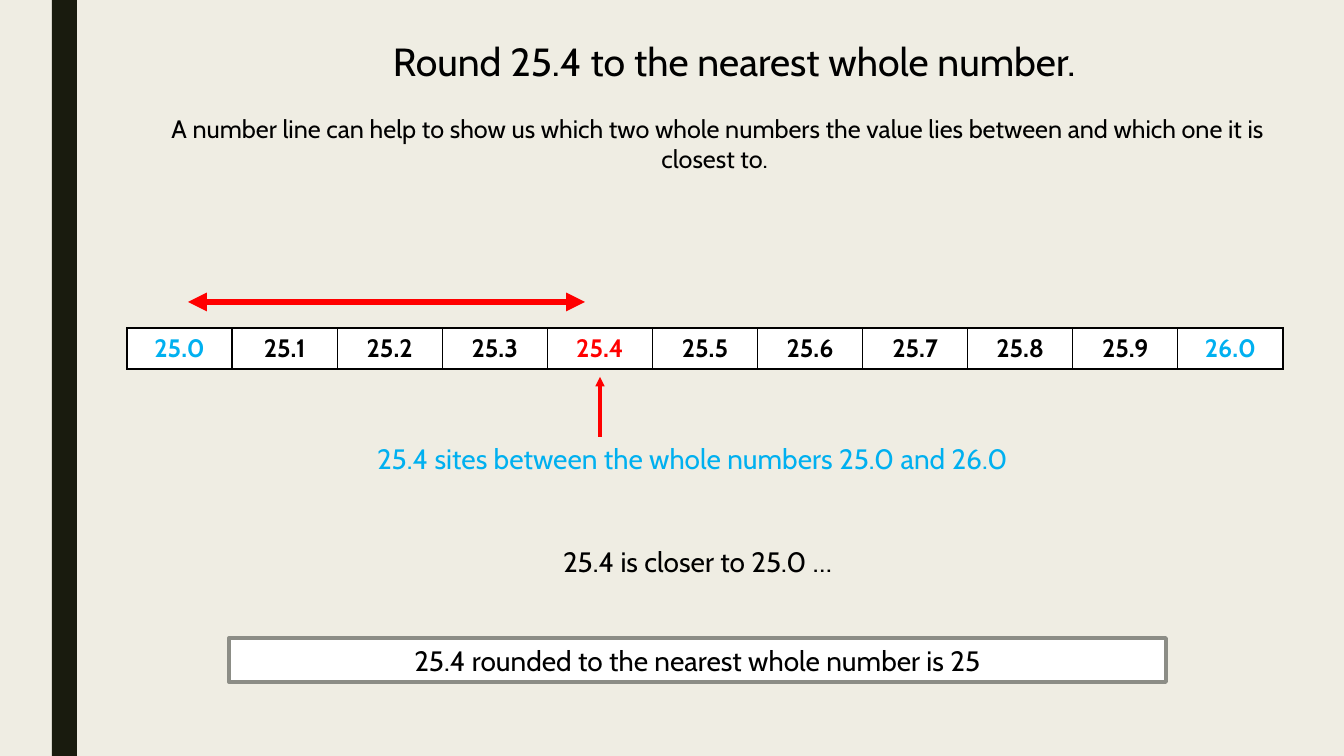
from lxml import etree
from pptx import Presentation
from pptx.dml.color import RGBColor
from pptx.enum.shapes import MSO_CONNECTOR, MSO_SHAPE
from pptx.enum.text import PP_ALIGN
from pptx.oxml.ns import qn
from pptx.util import Emu, Pt

CENTER = PP_ALIGN.CENTER
RECTANGLE = MSO_SHAPE.RECTANGLE
STRAIGHT = MSO_CONNECTOR.STRAIGHT

FONT = "Cabin"
BLACK, WHITE, BLUE, RED = "000000", "FFFFFF", "00B0F0", "FF0000"
BACKGROUND, BAND, BORDER = "EFEDE3", "191B0E", "8C8D86"

# Content: text, box in px (left, top, width, height), size, colour, wrap
STATEMENTS = [
    ("Round 25.4 to the nearest whole number. ", (375, 32, 727, 57), 28, BLACK, False),
    ("A number line can help to show us which two whole numbers the value lies "
     "between and which one it is closest to. ", (127, 108, 1181, 72), 18, BLACK, True),
    ("25.4 sites between the whole numbers 25.0 and 26.0",
     (224, 437, 937, 44), 20, BLUE, True),
    ("25.4 is closer to 25.0 …", (229, 540, 937, 44), 20, BLACK, True),
]
ANSWER = "25.4 rounded to the nearest whole number is 25"
ANSWER_BOX = (229, 638, 937, 44)
BAND_BOX = (52, 0, 25, 756)

NUMBERS = [f"{tenths / 10:.1f}" for tenths in range(250, 261)]
NUMBER_COLOURS = {"25.0": BLUE, "25.4": RED, "26.0": BLUE}
NUMBER_LINE_BOX = (127, 328, 1156, 41)

# Arrows: start, end, line width, arrowhead ends
ARROWS = [
    ((600, 437), (600, 377), 2.25, ["tailEnd"]),
    ((188, 302), (585, 302), 4.5, ["headEnd", "tailEnd"]),
]


def px(length):
    return Emu(round(length * 914400 / 100.8))


def colour(code):
    return RGBColor.from_string(code)


def write(frame, text, size, code, bold=False):
    frame.text = text
    paragraph = frame.paragraphs[0]
    paragraph.alignment = CENTER
    font = paragraph.font
    font.name, font.size, font.bold = FONT, Pt(size), bold
    font.color.rgb = colour(code)


def add_rectangle(slide, box, fill):
    rectangle = slide.shapes.add_shape(RECTANGLE, *map(px, box))
    rectangle.shadow.inherit = False
    rectangle.fill.solid()
    rectangle.fill.fore_color.rgb = colour(fill)
    rectangle.line.fill.background()
    return rectangle


def add_statement(slide, text, box, size, code, wrap):
    statement = slide.shapes.add_textbox(*map(px, box))
    statement.text_frame.word_wrap = wrap
    write(statement.text_frame, text, size, code)


def add_borders(cell):
    properties = cell._tc.get_or_add_tcPr()
    for position, side in enumerate(("lnL", "lnR", "lnT", "lnB")):
        border = etree.Element(qn(f"a:{side}"), w=str(Pt(1)))
        fill = etree.SubElement(border, qn("a:solidFill"))
        etree.SubElement(fill, qn("a:srgbClr"), val=BLACK)
        properties.insert(position, border)


def add_number_line(slide):
    table = slide.shapes.add_table(1, len(NUMBERS), *map(px, NUMBER_LINE_BOX)).table
    table.first_row = table.horz_banding = False
    for cell, number in zip(table.iter_cells(), NUMBERS):
        cell.fill.solid()
        cell.fill.fore_color.rgb = colour(WHITE)
        write(cell.text_frame, number, 18, NUMBER_COLOURS.get(number, BLACK), True)
        add_borders(cell)


def add_arrow(slide, start, end, width, heads):
    arrow = slide.shapes.add_connector(STRAIGHT, *map(px, start + end))
    arrow.line.color.rgb = colour(RED)
    arrow.line.width = Pt(width)
    for head in heads:
        etree.SubElement(arrow.line._get_or_add_ln(), qn(f"a:{head}"), type="triangle")
    etree.SubElement(arrow._element.spPr, qn("a:effectLst"))


def main():
    deck = Presentation()
    deck.slide_width, deck.slide_height = px(1344), px(756)
    slide = deck.slides.add_slide(deck.slide_layouts[6])
    slide.background.fill.solid()
    slide.background.fill.fore_color.rgb = colour(BACKGROUND)

    # Side band
    add_rectangle(slide, BAND_BOX, BAND)

    # Title, explanation and conclusions
    for statement in STATEMENTS:
        add_statement(slide, *statement)

    # Number line with its arrows
    add_number_line(slide)
    for arrow in ARROWS:
        add_arrow(slide, *arrow)

    # Framed answer
    answer = add_rectangle(slide, ANSWER_BOX, WHITE)
    answer.line.color.rgb = colour(BORDER)
    answer.line.width = Pt(2.75)
    answer.text_frame.word_wrap = True
    write(answer.text_frame, ANSWER, 20, BLACK)

    deck.save("out.pptx")


if __name__ == "__main__":
    main()
